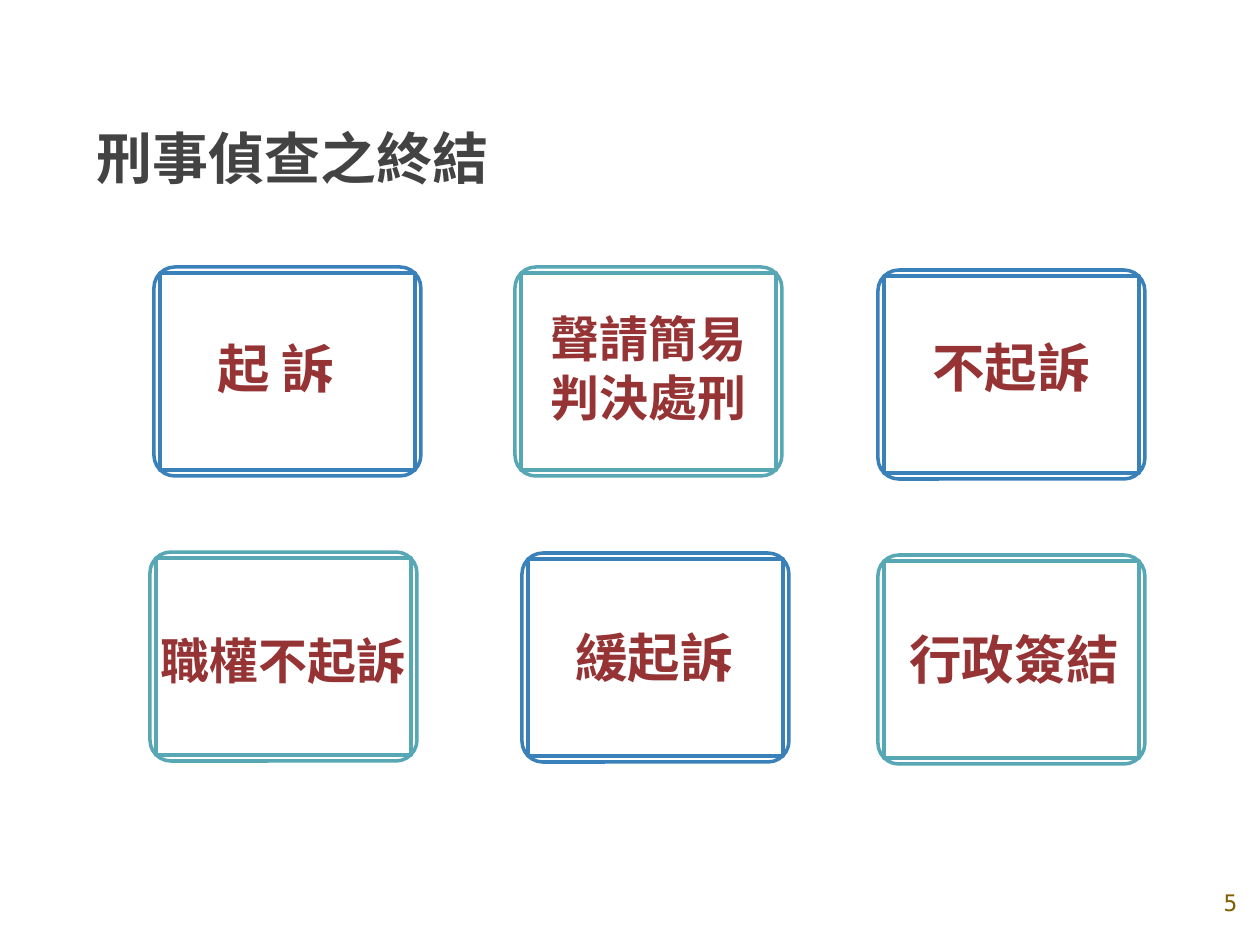
import pptx
import pptx.util
import pptx.dml.color
import pptx.enum.shapes
import pptx.enum.text
import pptx.oxml.ns
from lxml import etree

EMU_PER_PX = 914400 / 126
COLORS = {"blue": "3A81BA", "teal": "57A7B5", "outcome": "963334",
          "title": "434343", "number": "7F6000"}
CJK_FONT = "Noto Sans CJK SC"
FRAME_SIZE = (267, 209)
FRAME_INSET = 6

# Frame corner, colour, text corner and size, text size, lines
OUTCOMES = [
    ((154, 267), "blue", (205, 330, 158, 77), 30, ["起 訴"]),
    ((515, 267), "teal", (538, 302, 223, 131), 28, ["聲請簡易", "判決處刑"]),
    ((878, 270), "blue", (920, 329, 184, 77), 30, ["不起訴"]),
    ((150, 552), "teal", (148, 624, 273, 72), 28, ["職權不起訴"]),
    ((522, 553), "blue", (563, 619, 184, 77), 30, ["緩起訴"]),
    ((878, 555), "teal", (897, 621, 237, 77), 30, ["行政簽結"]),
]


def px(*lengths):
    return [pptx.util.Emu(round(length * EMU_PER_PX)) for length in lengths]


def rgb(name):
    return pptx.dml.color.RGBColor.from_string(COLORS[name])


def set_attributes(target, values):
    for name, value in values.items():
        setattr(target, name, value)


def write_lines(text_frame, lines, color, size, font_name=CJK_FONT, bold=True,
                alignment=pptx.enum.text.PP_ALIGN.LEFT):
    for index, line in enumerate(lines):
        paragraph = text_frame.paragraphs[0] if index == 0 else text_frame.add_paragraph()
        paragraph.alignment = alignment
        run = paragraph.add_run()
        run.text = line
        set_attributes(run.font, {"name": font_name, "size": pptx.util.Pt(size), "bold": bold})
        run.font.color.rgb = rgb(color)
        # East Asian characters take their own typeface
        east_asian = etree.SubElement(run.font._element, pptx.oxml.ns.qn("a:ea"))
        east_asian.set("typeface", font_name)


def add_title(slide, text):
    title = slide.shapes.title
    set_attributes(title, dict(zip(("left", "top", "width", "height"), px(84, 45, 1043, 158))))
    margins = dict.fromkeys(("margin_left", "margin_right", "margin_top", "margin_bottom"),
                            pptx.util.Inches(0.1))
    set_attributes(title.text_frame, {
        **margins, "vertical_anchor": pptx.enum.text.MSO_ANCHOR.BOTTOM,
        "auto_size": pptx.enum.text.MSO_AUTO_SIZE.NONE})
    write_lines(title.text_frame, [text], "title", 32)


def add_frame(slide, corner, color):
    """Group a rounded rectangle with a square one inset in it."""
    group = slide.shapes.add_group_shape()
    shape_types = pptx.enum.shapes.MSO_SHAPE
    for shape_type, inset in ((shape_types.ROUNDED_RECTANGLE, 0),
                              (shape_types.RECTANGLE, FRAME_INSET)):
        left, top = (position + inset for position in corner)
        width, height = (length - 2 * inset for length in FRAME_SIZE)
        shape = group.shapes.add_shape(shape_type, *px(left, top, width, height))
        shape.shadow.inherit = False
        shape.fill.background()
        shape.line.color.rgb = rgb(color)
        shape.line.width = pptx.util.Pt(2)
        if inset == 0:
            shape.adjustments[0] = 0.1


def add_outcome_text(slide, box, lines, size):
    text_frame = slide.shapes.add_textbox(*px(*box)).text_frame
    set_attributes(text_frame, {"word_wrap": False,
                                "auto_size": pptx.enum.text.MSO_AUTO_SIZE.SHAPE_TO_FIT_TEXT})
    write_lines(text_frame, lines, "outcome", size)


def add_slide_number(slide, text):
    text_frame = slide.shapes.add_textbox(*px(1201, 859, 59, 86)).text_frame
    set_attributes(text_frame, {"word_wrap": True,
                                "vertical_anchor": pptx.enum.text.MSO_ANCHOR.MIDDLE})
    write_lines(text_frame, [text], "number", 13, "DejaVu Sans Mono", False,
                pptx.enum.text.PP_ALIGN.CENTER)


def main():
    presentation = pptx.Presentation()
    presentation.slide_width, presentation.slide_height = px(1260, 945)
    slide = presentation.slides.add_slide(presentation.slide_layouts[5])

    # Heading and page number
    add_title(slide, "刑事偵查之終結")
    add_slide_number(slide, "5")

    # Six ways an investigation ends
    for corner, color, box, size, lines in OUTCOMES:
        add_frame(slide, corner, color)
        add_outcome_text(slide, box, lines, size)

    presentation.save("out.pptx")


if __name__ == "__main__":
    main()
